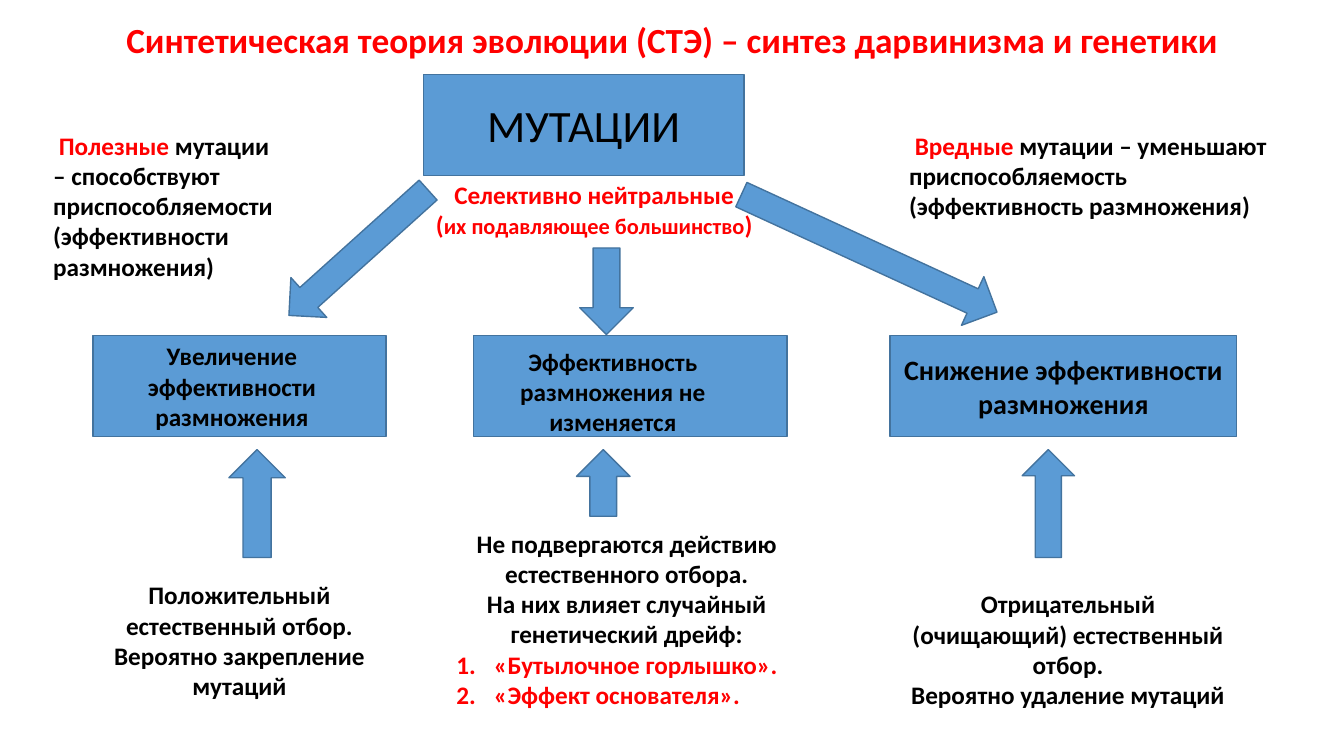
from dataclasses import dataclass

from lxml.etree import SubElement
from pptx import Presentation
from pptx.dml.color import RGBColor
from pptx.enum.shapes import MSO_SHAPE as Kind
from pptx.enum.text import MSO_ANCHOR as Anchor, MSO_AUTO_SIZE as Auto, PP_ALIGN as Align
from pptx.oxml.ns import qn
from pptx.util import Cm, Pt


@dataclass(frozen=True)
class Theme:
    font: str = "Calibri"
    ink: RGBColor = RGBColor(0, 0, 0)
    red: RGBColor = RGBColor(0xFF, 0, 0)
    blue: RGBColor = RGBColor(0x5B, 0x9B, 0xD5)
    edge: RGBColor = RGBColor(0x43, 0x73, 0x9E)
    title: float = 25.2
    main: int = 32
    large: int = 20
    body: int = 18
    small: int = 16


@dataclass(frozen=True)
class Box:
    """A frame in centimetres."""
    x: float
    y: float
    w: float
    h: float

    def sub(self, dx, dy, w, h):
        return Box(self.x + dx, self.y + dy, w, h)

    def cm(self):
        return [Cm(side) for side in (self.x, self.y, self.w, self.h)]


@dataclass(frozen=True)
class Run:
    text: str
    color: RGBColor = Theme.ink
    size: float = Theme.body
    bold: bool = True


@dataclass(frozen=True)
class Para:
    runs: tuple
    align: Align = Align.CENTER
    number: bool = False


def line(text, **style):
    return Para((Run(text, **style),))


def point(text):
    return Para((Run(text, color=THEME.red),), Align.LEFT, True)


def write(frame, paras):
    frame.word_wrap = True
    for i, para in enumerate(paras):
        p = frame.add_paragraph() if i else frame.paragraphs[0]
        p.alignment = para.align
        if para.number:
            props = p._p.get_or_add_pPr()
            props.set("marL", str(Cm(0.95)))
            props.set("indent", str(-Cm(0.95)))
            SubElement(props, qn("a:buFont"), typeface="+mj-lt")
            SubElement(props, qn("a:buAutoNum"), type="arabicPeriod")
        for item in para.runs:
            run = p.add_run()
            run.text = item.text
            font = run.font
            font.name, font.size, font.bold = THEME.font, Pt(item.size), item.bold
            font.color.rgb = item.color


def label(slide, box, *paras):
    frame = slide.shapes.add_textbox(*box.cm()).text_frame
    write(frame, paras)
    frame.auto_size = Auto.SHAPE_TO_FIT_TEXT


def block(slide, box, kind=Kind.RECTANGLE, turn=0, paras=()):
    shape = slide.shapes.add_shape(kind, *box.cm())
    shape.shadow.inherit = False
    shape.fill.solid()
    shape.fill.fore_color.rgb = THEME.blue
    shape.line.color.rgb = THEME.edge
    shape.line.width = Pt(1)
    shape.rotation = turn
    shape.text_frame.vertical_anchor = Anchor.MIDDLE
    write(shape.text_frame, paras)


def head(slide, box, text):
    title = slide.shapes.title
    title.left, title.top, title.width, title.height = box.cm()
    frame = title.text_frame
    frame.auto_size = Auto.NONE
    frame.vertical_anchor = Anchor.MIDDLE
    write(frame, [line(text, color=THEME.red, size=THEME.title)])
    frame.paragraphs[0].line_spacing = 0.9


def source(slide, box):
    """Place the mutation block, its three arrows and their captions."""
    block(slide, box.sub(9.58, 0, 8.08, 2.54),
          paras=[line("МУТАЦИИ", size=THEME.main, bold=False)])
    for dx, dy, long, turn in ((13.52, 4.37, 2.18, 0), (7.27, 2.13, 4.72, 48),
                               (20.14, 0.96, 7.09, 294.7)):
        block(slide, box.sub(dx, dy, 1.35, long), Kind.DOWN_ARROW, turn)
    for dx, wide, high, word, rest in (
            (0, 6.17, 4.11, "Полезные",
             " мутации – способствуют приспособляемости (эффективности размножения)"),
            (21.57, 9.78, 2.57, "Вредные",
             " мутации – уменьшают приспособляемость (эффективность размножения)")):
        runs = Run(" "), Run(word, THEME.red), Run(rest)
        label(slide, box.sub(dx, 1.27, wide, high), Para(runs, Align.LEFT))
    label(slide, box.sub(9.58, 2.51, 8.61, 2.57),
          line("Селективно нейтральные", color=THEME.red),
          Para((Run("(", THEME.red),
                Run("их подавляющее большинство", THEME.red, THEME.small),
                Run(")", THEME.red))))


def column(slide, box, result, drop, arrow, note, paras):
    """Place a result block, the arrow up to it and the cause below.

    drop lowers the result's own text box; None writes in the block.
    """
    band = box.sub(0, 0, box.w, 2.54)
    if drop is None:
        block(slide, band, paras=[line(result, size=THEME.large)])
    else:
        block(slide, band)
        label(slide, box.sub(0, drop, 7.01, 2.57), line(result))
    dx, wide, long = arrow
    block(slide, box.sub(dx, 2.87, wide, long), Kind.UP_ARROW)
    label(slide, box.sub(*note), *paras)


THEME = Theme()
COLUMNS = (
    (2.34, 7.39, "Увеличение эффективности размножения", 0,
     (3.43, 1.42, 2.72), (0, 6.02, 7.39, 3.33),
     (line("Положительный естественный отбор."),
      line("Вероятно закрепление мутаций"))),
    (11.94, 7.9, "Эффективность размножения не изменяется", 0.13,
     (2.59, 1.35, 1.68), (-0.69, 4.72, 9.09, 4.88),
     (line("Не подвергаются действию естественного отбора."),
      line("На них влияет случайный генетический дрейф:"),
      point("«Бутылочное горлышко»."),
      point("«Эффект основателя»."))),
    (22.43, 8.74, "Снижение эффективности размножения", None,
     (3.33, 1.32, 2.72), (0.23, 6.25, 8.51, 3.33),
     (line("Отрицательный (очищающий) естественный отбор."),
      line("Вероятно удаление мутаций"))),
)


def main():
    deck = Presentation()
    deck.slide_width, deck.slide_height = Cm(33.87), Cm(19.05)
    slide = deck.slides.add_slide(deck.slide_layouts[5])
    head(slide, Box(2.34, 0, 29.21, 2.13),
         "Синтетическая теория эволюции (СТЭ) – синтез дарвинизма и генетики")
    source(slide, Box(1.09, 1.88, 31.35, 6.58))
    for x, wide, *parts in COLUMNS:
        column(slide, Box(x, 8.46, wide, 9.6), *parts)
    deck.save("out.pptx")


if __name__ == "__main__":
    main()
